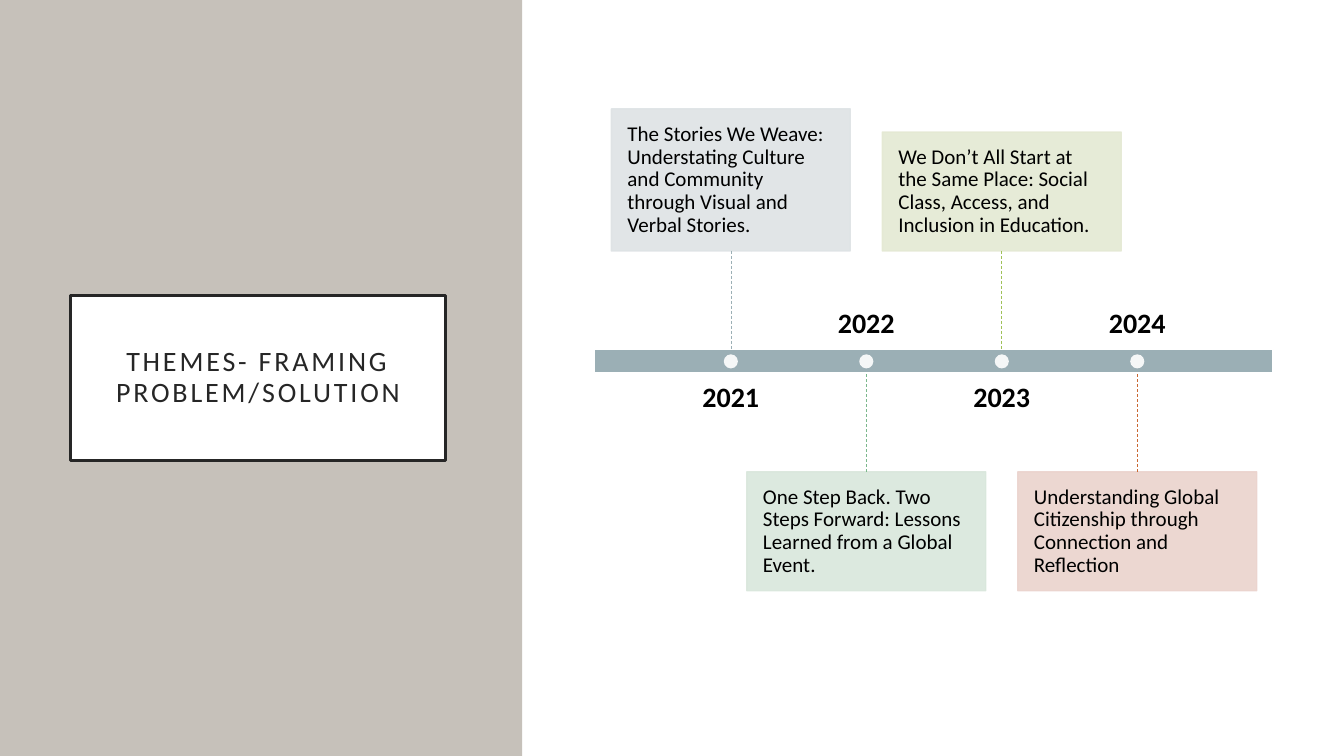
from dataclasses import dataclass

from pptx import Presentation
from pptx.dml.color import RGBColor
from pptx.enum.dml import MSO_LINE
from pptx.enum.shapes import MSO_CONNECTOR, MSO_SHAPE as Preset
from pptx.enum.text import MSO_ANCHOR as Anchor, PP_ALIGN as Align
from pptx.oxml.ns import qn
from pptx.oxml.xmlchemy import OxmlElement
from pptx.shapes.autoshape import Shape
from pptx.slide import Slide
from pptx.util import Emu, Inches, Pt

WIDTH, HEIGHT = Inches(13.33), Inches(7.5)
FONT = "Calibri"
COLORS = {
    "panel": "C6C1BA", "white": "FFFFFF", "ink": "262626", "black": "000000",
    "bar": "9BAFB5", "mist": "DEE3E5", "mint": "D9E7DC", "olive": "E4E9D3",
    "blush": "EBD3CD", "green": "7BB88C", "lime": "9FC057", "rust": "C96731",
}

# The slide is a grid of 100 columns by 100 rows.
BAR_LEFT, BAR_TOP, BAR_WIDTH, BAR_HEIGHT = 44.25, 46.27, 50.48, 3.07
BAR_BOTTOM = BAR_TOP + BAR_HEIGHT
FIRST_YEAR, YEAR_STEP = 54.38, 10.08
CARD_WIDTH, STEM = 17.78, 13.07
LABEL_WIDTH, LABEL_HEIGHT, LABEL_GAP = 16.13, 8.67, 1.33
DOT_WIDTH, DOT_HEIGHT = 1.05, 1.87


@dataclass(frozen=True)
class Box:
    left: float
    top: float
    width: float
    height: float

    def emu(self) -> tuple[Emu, Emu, Emu, Emu]:
        return across(self.left), down(self.top), across(self.width), down(self.height)


@dataclass(frozen=True)
class Milestone:
    year: str
    theme: str
    card_color: str
    stem_color: str
    card_height: float
    above: bool


MILESTONES = [
    Milestone("2021", "The Stories We Weave: Understating Culture and Community "
              "through Visual and Verbal Stories.", "mist", "bar", 18.8, True),
    Milestone("2022", "One Step Back. Two Steps Forward: Lessons Learned from "
              "a Global Event.", "mint", "green", 15.73, False),
    Milestone("2023", "We Don’t All Start at the Same Place: Social Class, "
              "Access, and Inclusion in Education.", "olive", "lime", 15.73, True),
    Milestone("2024", "Understanding Global Citizenship through Connection and "
              "Reflection", "blush", "rust", 15.73, False),
]


def across(columns: float) -> Emu:
    return Emu(round(WIDTH * columns / 100))


def down(rows: float) -> Emu:
    return Emu(round(HEIGHT * rows / 100))


def color(name: str) -> RGBColor:
    return RGBColor.from_string(COLORS[name])


def add_block(slide: Slide, box: Box, fill: str, line: str | None = None,
              line_width: float = 1, preset: Preset = Preset.RECTANGLE) -> Shape:
    shape = slide.shapes.add_shape(preset, *box.emu())
    shape.shadow.inherit = False
    shape.fill.solid()
    shape.fill.fore_color.rgb = color(fill)
    if line:
        shape.line.color.rgb = color(line)
        shape.line.width = Pt(line_width)
    else:
        shape.line.fill.background()
    return shape


def make_translucent(shape: Shape) -> None:
    """Give the shape's fill and line 90% opacity."""
    for tint in shape._element.spPr.iter(qn("a:srgbClr")):
        alpha = OxmlElement("a:alpha")
        alpha.set("val", "90000")
        tint.append(alpha)


def write(shape: Shape, text: str, size: float, ink: str, align: Align,
          anchor: Anchor, inset: float = 0, bold: bool = False) -> None:
    frame = shape.text_frame
    frame.word_wrap = True
    frame.vertical_anchor = anchor
    frame.margin_left = frame.margin_right = Inches(inset)
    frame.margin_top = frame.margin_bottom = Inches(inset)
    paragraph = frame.paragraphs[0]
    paragraph.text = text
    paragraph.alignment = align
    paragraph.line_spacing = 0.9
    font = paragraph.font
    font.name, font.size, font.bold = FONT, Pt(size), bold
    font.color.rgb = color(ink)


def add_title(slide: Slide) -> None:
    title = add_block(slide, Box(5.25, 39.07, 27.9, 21.87), "white", "ink", 2.5)
    write(title, "THEMES- FRAMING PROBLEM/SOLUTION", 20, "ink",
          Align.CENTER, Anchor.MIDDLE, 0.2)
    run = title.text_frame.paragraphs[0].runs[0]
    run._r.get_or_add_rPr().set("spc", "200")


def add_stem(slide: Slide, card: Shape, center: float, milestone: Milestone) -> None:
    bar_edge = down(BAR_TOP if milestone.above else BAR_BOTTOM)
    x = across(center)
    stem = slide.shapes.add_connector(MSO_CONNECTOR.STRAIGHT, x, bar_edge, x, bar_edge)
    stem.begin_connect(card, 2 if milestone.above else 0)
    stem.line.color.rgb = color(milestone.stem_color)
    stem.line.width = Pt(0.5)
    stem.line.dash_style = MSO_LINE.DASH
    stem._element.spPr.append(OxmlElement("a:effectLst"))


def add_milestone(slide: Slide, milestone: Milestone, center: float) -> None:
    if milestone.above:
        card_top = BAR_TOP - STEM - milestone.card_height
        label_top, label_anchor = BAR_BOTTOM + LABEL_GAP, Anchor.TOP
    else:
        card_top = BAR_BOTTOM + STEM
        label_top, label_anchor = BAR_TOP - LABEL_GAP - LABEL_HEIGHT, Anchor.BOTTOM

    label_box = Box(center - LABEL_WIDTH / 2, label_top, LABEL_WIDTH, LABEL_HEIGHT)
    label = slide.shapes.add_textbox(*label_box.emu())
    write(label, milestone.year, 20, "black", Align.CENTER, label_anchor, bold=True)

    card_box = Box(center - CARD_WIDTH / 2, card_top, CARD_WIDTH, milestone.card_height)
    card = add_block(slide, card_box, milestone.card_color, milestone.card_color)
    make_translucent(card)
    write(card, milestone.theme, 15, "black", Align.LEFT, Anchor.MIDDLE, 0.16)
    add_stem(slide, card, center, milestone)

    dot_top = BAR_TOP + (BAR_HEIGHT - DOT_HEIGHT) / 2
    dot_box = Box(center - DOT_WIDTH / 2, dot_top, DOT_WIDTH, DOT_HEIGHT)
    make_translucent(add_block(slide, dot_box, "white", preset=Preset.OVAL))


def main() -> None:
    presentation = Presentation()
    presentation.slide_width, presentation.slide_height = WIDTH, HEIGHT
    slide = presentation.slides.add_slide(presentation.slide_layouts[6])

    add_block(slide, Box(0, 0, 38.85, 100), "panel")
    add_title(slide)
    add_block(slide, Box(39, 0, 61, 100), "white")
    add_block(slide, Box(BAR_LEFT, BAR_TOP, BAR_WIDTH, BAR_HEIGHT), "bar", "white")
    for index, milestone in enumerate(MILESTONES):
        add_milestone(slide, milestone, FIRST_YEAR + index * YEAR_STEP)

    presentation.save("out.pptx")


if __name__ == "__main__":
    main()
